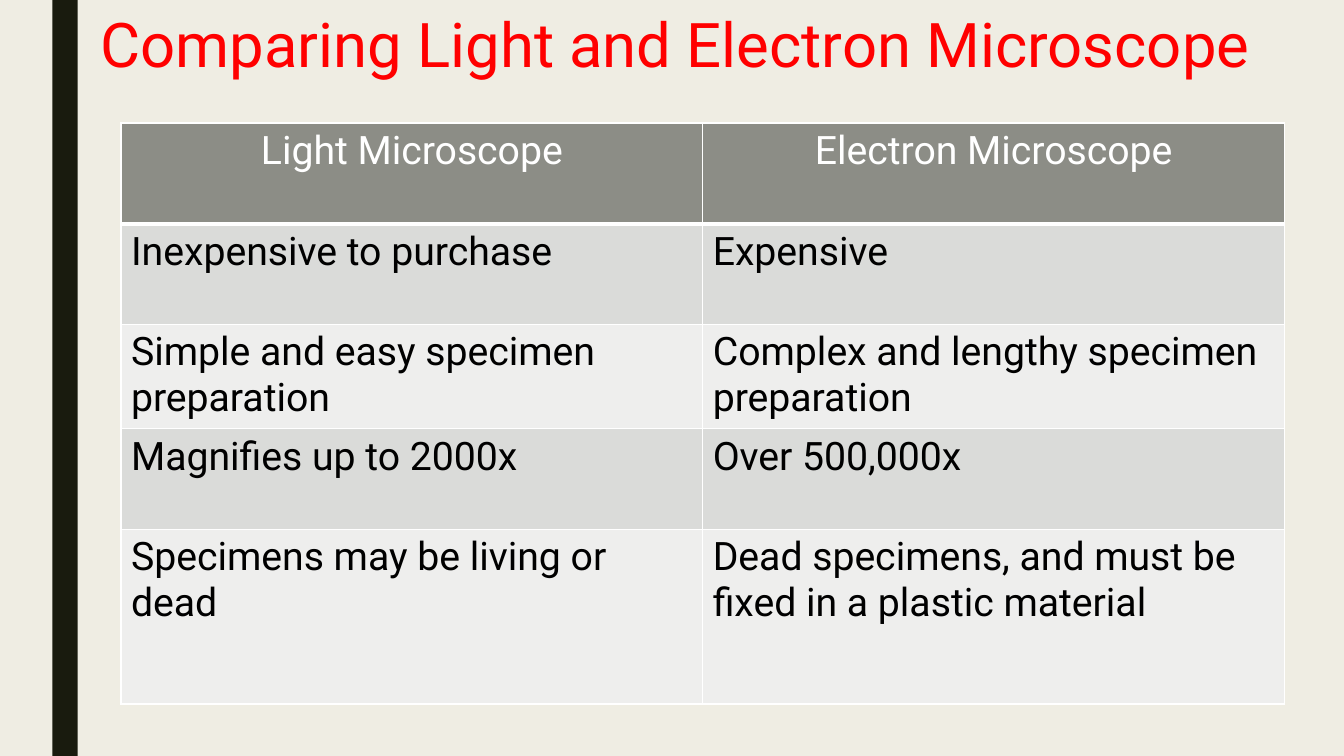
from lxml.etree import SubElement
from pptx import Presentation
from pptx.dml.color import RGBColor as RGB
from pptx.enum.shapes import MSO_SHAPE as Shape
from pptx.enum.text import MSO_ANCHOR as Anchor, PP_ALIGN as Align
from pptx.oxml.ns import qn
from pptx.util import Inches, Pt

COLORS = {
    "background": "EFEDE3", "bar": "191B0E", "title": "FF0000",
    "header": "8C8D86", "dark band": "DADBD9", "light band": "EEEEED",
    "white": "FFFFFF", "black": "000000",
}
FONT = "Roboto"
ROWS = [
    ("Light Microscope", "Electron Microscope"),
    ("Inexpensive to purchase", "Expensive"),
    ("Simple and easy specimen preparation", "Complex and lengthy specimen preparation"),
    ("Magnifies up to 2000x", "Over 500,000x"),
    ("Specimens may be living or dead",
     "Dead specimens, and must be fixed in a plastic material"),
]
ROW_HEIGHTS = [1, 1, 1, 1, 1.73]
COLUMN_WIDTH = 5.77


def style_text(para, size, color):
    font = para.runs[0].font
    font.name, font.size = FONT, Pt(size)
    font.color.rgb = RGB.from_string(COLORS[color])


def add_border(cell, side, width):
    line = SubElement(cell._tc.get_or_add_tcPr(), qn(f"a:ln{side}"), w=str(Pt(width)))
    fill = SubElement(line, qn("a:solidFill"))
    SubElement(fill, qn("a:srgbClr"), val=COLORS["white"])


# Slide and background
deck = Presentation()
deck.slide_width, deck.slide_height = Inches(13.33), Inches(7.5)
page = deck.slides.add_slide(deck.slide_layouts[6])
page.background.fill.solid()
page.background.fill.fore_color.rgb = RGB.from_string(COLORS["background"])

# Vertical bar on the left
bar = page.shapes.add_shape(Shape.RECTANGLE, Inches(0.52), 0, Inches(0.25), deck.slide_height)
bar.shadow.inherit = False
bar.fill.solid()
bar.fill.fore_color.rgb = RGB.from_string(COLORS["bar"])
bar.line.fill.background()

# Title
box = page.shapes.add_textbox(Inches(0.9), Inches(0.1), Inches(12.15), Inches(1.62))
frame = box.text_frame
frame.word_wrap = True
frame.vertical_anchor = Anchor.TOP
frame.text = "Comparing Light and Electron Microscope"
frame.paragraphs[0].line_spacing = 0.89
style_text(frame.paragraphs[0], 44, "title")

# Comparison table
table = page.shapes.add_table(
    len(ROWS), 2, Inches(1.2), Inches(1.22),
    Inches(2 * COLUMN_WIDTH), Inches(sum(ROW_HEIGHTS))).table
for column in table.columns:
    column.width = Inches(COLUMN_WIDTH)

for row, (texts, height) in enumerate(zip(ROWS, ROW_HEIGHTS)):
    table.rows[row].height = Inches(height)
    is_header = row == 0
    band = "header" if is_header else "dark band" if row % 2 else "light band"
    for column, text in enumerate(texts):
        cell = table.cell(row, column)
        for side in "LRTB":
            add_border(cell, side, 3 if is_header and side == "B" else 1)
        cell.fill.solid()
        cell.fill.fore_color.rgb = RGB.from_string(COLORS[band])
        cell.text_frame.text = text
        para = cell.text_frame.paragraphs[0]
        para.alignment = Align.CENTER if is_header else Align.LEFT
        style_text(para, 28, "white" if is_header else "black")
        para.runs[0].font.bold = False

deck.save("out.pptx")
